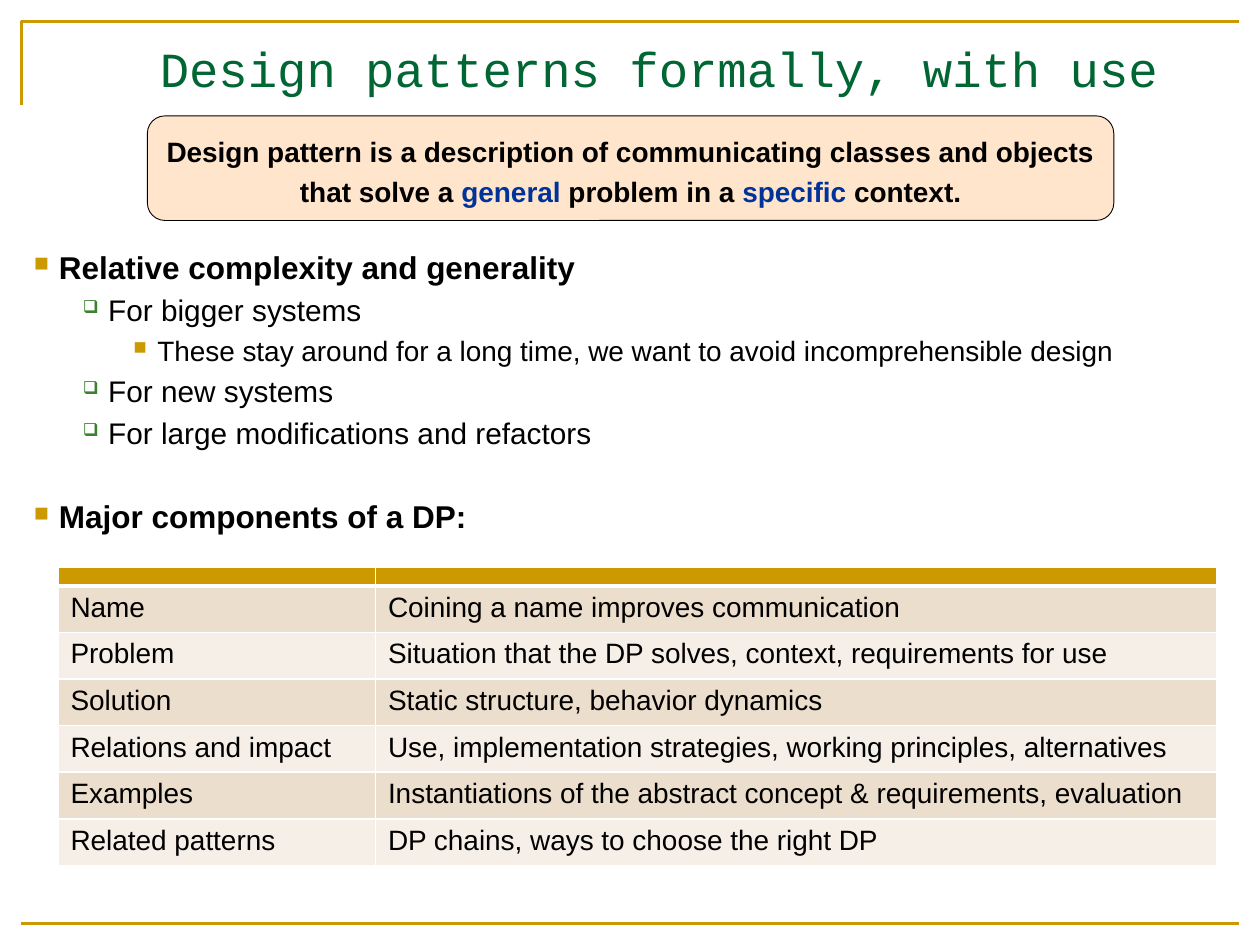
import pptx
import pptx.dml.color
import pptx.enum.shapes
import pptx.enum.text
import pptx.oxml
import pptx.oxml.ns
import pptx.util
from lxml import etree

Inches = pptx.util.Inches
Pt = pptx.util.Pt
qn = pptx.oxml.ns.qn
Anchor = pptx.enum.text.MSO_ANCHOR
Align = pptx.enum.text.PP_ALIGN
Shape = pptx.enum.shapes.MSO_SHAPE

COLORS = {
    "gold": "CC9900", "green": "006633", "leaf": "3B812F", "peach": "FFCC99",
    "blue": "003399", "black": "000000", "white": "FFFFFF",
    "dark": "ECDECC", "light": "F6EFE7",
}
# Per level: indent, hang, size, space before, mark, mark colour, mark percent
LEVELS = [
    (0.2, 0.2, 18, 3.6, "■", "gold", 65),
    (0.59, 0.2, 17, 3.4, "❑", "leaf", 60),
    (0.98, 0.19, 16, 3.2, "■", "gold", 65),
]
# Level, wording, extra space above in points
POINTS = [
    (0, "Relative complexity and generality", 0),
    (1, "For bigger systems", 0),
    (2, "These stay around for a long time, we want to avoid "
        "incomprehensible design", 0),
    (1, "For new systems", 0),
    (1, "For large modifications and refactors", 0),
    (0, "Major components of a DP:", 23.4),
]
CLAIM = [
    [("Design pattern is a description of communicating classes and objects",
      "black")],
    [("that solve a ", "black"), ("general", "blue"),
     (" problem in a ", "black"), ("specific", "blue"),
     (" context.", "black")],
]
PARTS = [
    ("Name", "Coining a name improves communication"),
    ("Problem", "Situation that the DP solves, context, requirements for use"),
    ("Solution", "Static structure, behavior dynamics"),
    ("Relations and impact",
     "Use, implementation strategies, working principles, alternatives"),
    ("Examples",
     "Instantiations of the abstract concept & requirements, evaluation"),
    ("Related patterns", "DP chains, ways to choose the right DP"),
]


def color(name):
    return pptx.dml.color.RGBColor.from_string(COLORS[name])


def add_xml(parent, tag, **attrs):
    return etree.SubElement(parent, qn(tag), attrs)


def style(font, size, name="Arial", tint="black", bold=False):
    font.size, font.name, font.bold = Pt(size), name, bold
    font.color.rgb = color(tint)


def bullet(para, mark, tint, size):
    props = para._p.get_or_add_pPr()
    add_xml(add_xml(props, "a:buClr"), "a:srgbClr", val=COLORS[tint])
    add_xml(props, "a:buSzPct", val=str(size * 1000))
    add_xml(props, "a:buChar", char=mark)
    return props


def border(cell, low):
    """Draw white cell edges; low is the width of the bottom one."""
    props = cell._tc.get_or_add_tcPr()
    edges = [("a:lnL", 0.96), ("a:lnR", 0.96), ("a:lnT", 0.96), ("a:lnB", low)]
    for place, (tag, width) in enumerate(edges):
        line = etree.Element(qn(tag), w=str(int(Pt(width))))
        add_xml(add_xml(line, "a:solidFill"), "a:srgbClr", val=COLORS["white"])
        props.insert(place, line)


class Deck:
    def __init__(self):
        self.file = pptx.Presentation()
        self.file.slide_width = Inches(10)
        self.file.slide_height = Inches(7.5)
        self.slide = self.file.slides.add_slide(self.file.slide_layouts[6])
        self.shapes = self.slide.shapes

    def frame(self):
        """Draw the corner at the top and the rule at the bottom."""
        build = self.shapes.build_freeform(Inches(0.17), Inches(0.83))
        build.add_line_segments(
            [(Inches(0.17), Inches(0.17)), (Inches(9.83), Inches(0.17))],
            close=False)
        corner = build.convert_to_shape()
        corner.shadow.inherit = False
        corner.fill.background()
        rule = self.shapes.add_connector(
            pptx.enum.shapes.MSO_CONNECTOR.STRAIGHT,
            Inches(0.17), Inches(7.33), Inches(9.83), Inches(7.33))
        add_xml(rule._element.spPr, "a:effectLst")
        for item in (corner, rule):
            item.line.color.rgb = color("gold")
            item.line.width = Pt(1.5)

    def text_box(self, left, top, width, height):
        box = self.shapes.add_textbox(
            Inches(left), Inches(top), Inches(width), Inches(height))
        box.text_frame.word_wrap = True
        return box.text_frame

    def title(self, text):
        frame = self.text_box(1.17, 0.25, 8.67, 0.58)
        frame.vertical_anchor = Anchor.MIDDLE
        para = frame.paragraphs[0]
        para.text = text
        style(para.font, 28, "Courier New", "green")

    def points(self, items):
        frame = self.text_box(0.17, 1.92, 9.67, 5.42)
        for place, (level, text, extra) in enumerate(items):
            para = frame.add_paragraph() if place else frame.paragraphs[0]
            left, hang, size, space, mark, tint, scale = LEVELS[level]
            para.text = text
            para.level = level
            props = bullet(para, mark, tint, scale)
            props.set("marL", str(int(Inches(left))))
            props.set("indent", str(-int(Inches(hang))))
            para.space_before = Pt(space + extra if place else 0)
            style(para.font, size, bold=level == 0)

    def callout(self, lines):
        shape = self.shapes.add_shape(
            Shape.ROUNDED_RECTANGULAR_CALLOUT,
            Inches(1.17), Inches(0.92), Inches(7.67), Inches(0.83))
        for place, value in enumerate((-0.5, -0.266, 0.167)):
            shape.adjustments[place] = value
        shape.shadow.inherit = False
        shape.fill.solid()
        shape.fill.fore_color.rgb = color("peach")
        tint = shape._element.spPr.find(qn("a:solidFill"))[0]
        add_xml(tint, "a:alpha", val="50000")
        shape.line.color.rgb = color("black")
        shape.line.width = Pt(0.5)
        frame = shape.text_frame
        frame.word_wrap = True
        frame.vertical_anchor = Anchor.MIDDLE
        frame.margin_left = frame.margin_right = Inches(0.06)
        frame.margin_top = frame.margin_bottom = Inches(0.04)
        for place, line in enumerate(lines):
            para = frame.add_paragraph() if place else frame.paragraphs[0]
            para.alignment = Align.CENTER
            para.line_spacing = 1.2
            for text, name in line:
                run = para.add_run()
                run.text = text
                style(run.font, 16, tint=name, bold=True)

    def table(self, rows):
        grid = self.shapes.add_table(
            len(rows) + 1, 2, Inches(0.46), Inches(4.5),
            Inches(9.2), Inches(2.37)).table
        for col, width in zip(grid.columns, (2.52, 6.68)):
            col.width = Inches(width)
        for place, texts in enumerate([("", "")] + rows):
            head = place == 0
            grid.rows[place].height = Inches(0.15 if head else 0.37)
            fill = "gold" if head else ("light", "dark")[place % 2]
            for col, text in enumerate(texts):
                cell = grid.cell(place, col)
                cell.fill.solid()
                cell.fill.fore_color.rgb = color(fill)
                border(cell, 3 if head else 0.96)
                para = cell.text_frame.paragraphs[0]
                if head:
                    cell.margin_top = cell.margin_bottom = 0
                    add_xml(para._p, "a:endParaRPr", sz="600")
                else:
                    para.text = text
                    style(para.font, 16)


def main():
    deck = Deck()
    deck.frame()
    deck.title("Design patterns formally, with use")
    deck.points(POINTS)
    deck.callout(CLAIM)
    deck.table(PARTS)
    deck.file.save("out.pptx")


if __name__ == "__main__":
    main()
